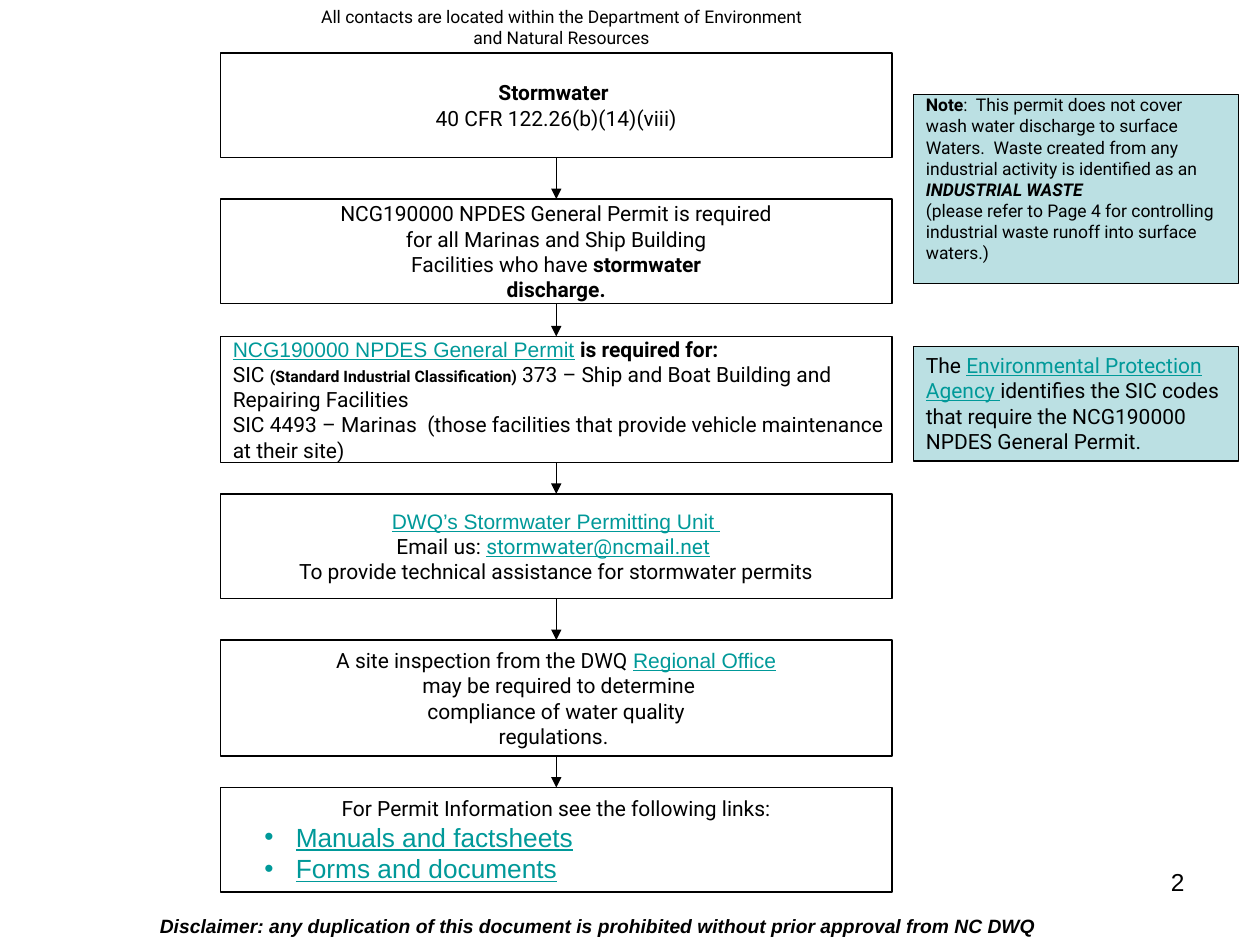
from itertools import pairwise

from lxml.etree import SubElement
from pptx import Presentation
from pptx.dml.color import RGBColor
from pptx.enum.shapes import MSO_CONNECTOR, MSO_SHAPE
from pptx.enum.text import MSO_ANCHOR, PP_ALIGN
from pptx.oxml.ns import qn
from pptx.util import Inches, Pt

BLACK = RGBColor(0x00, 0x00, 0x00)
WHITE = RGBColor(0xFF, 0xFF, 0xFF)
TEAL = RGBColor(0x00, 0x99, 0x99)
PALE_BLUE = RGBColor(0xBB, 0xE0, 0xE3)

FLOW_LEFT, FLOW_WIDTH = 1.75, 5.33
NOTE_LEFT, NOTE_WIDTH = 7.25, 2.58


def text_run(text, font="Roboto", size=12, color=BLACK, bold=False, italic=False, underline=False):
    return dict(text=text, font=font, size=size, color=color,
                bold=bold, italic=italic, underline=underline)


def link_run(text, font="Arial", size=12):
    return text_run(text, font=font, size=size, color=TEAL, underline=True)


class SlideBuilder:
    def __init__(self, slide):
        self.slide = slide
        self.line_width = Pt(0.75)

    def fill_text(self, frame, lines, align=PP_ALIGN.LEFT, bullets_from=None):
        for index, runs in enumerate(lines):
            paragraph = frame.paragraphs[0] if index == 0 else frame.add_paragraph()
            paragraph.alignment = align
            if bullets_from is not None and index >= bullets_from:
                paragraph.alignment = PP_ALIGN.LEFT
                self.add_bullet(paragraph)
            for values in runs:
                run = paragraph.add_run()
                run.text = values["text"]
                run.font.name = values["font"]
                run.font.size = Pt(values["size"])
                run.font.bold = values["bold"]
                run.font.italic = values["italic"]
                run.font.underline = values["underline"]
                run.font.color.rgb = values["color"]

    def add_bullet(self, paragraph):
        properties = paragraph._p.get_or_add_pPr()
        properties.set("marL", str(Inches(0.5)))
        properties.set("indent", str(-Inches(0.25)))
        SubElement(properties, qn("a:buFont"), typeface="Arial")
        SubElement(properties, qn("a:buChar"), char="•")

    def text(self, left, top, width, height, lines, align=PP_ALIGN.LEFT):
        box = self.slide.shapes.add_textbox(
            Inches(left), Inches(top), Inches(width), Inches(height))
        box.text_frame.word_wrap = True
        self.fill_text(box.text_frame, lines, align)

    def box(self, left, top, width, height, lines, fill=WHITE, align=PP_ALIGN.LEFT,
            kind=MSO_SHAPE.FLOWCHART_PROCESS, anchor=MSO_ANCHOR.MIDDLE, wrap=False,
            margin_top=0.05, bullets_from=None):
        shape = self.slide.shapes.add_shape(
            kind, Inches(left), Inches(top), Inches(width), Inches(height))
        shape.shadow.inherit = False
        shape.fill.solid()
        shape.fill.fore_color.rgb = fill
        shape.line.color.rgb = BLACK
        shape.line.width = self.line_width
        frame = shape.text_frame
        frame.word_wrap = wrap
        frame.vertical_anchor = anchor
        frame.margin_top = Inches(margin_top)
        self.fill_text(frame, lines, align, bullets_from)

    def arrow(self, x, start, end):
        connector = self.slide.shapes.add_connector(
            MSO_CONNECTOR.STRAIGHT, Inches(x), Inches(start), Inches(x), Inches(end))
        connector.line.color.rgb = BLACK
        connector.line.width = self.line_width
        SubElement(connector.line._get_or_add_ln(), qn("a:tailEnd"), type="triangle")
        SubElement(connector._element.spPr, qn("a:effectLst"))


CENTER = {"align": PP_ALIGN.CENTER}

FLOW_STEPS = [
    (0.42, 0.83, CENTER, [
        [text_run("Stormwater ", bold=True)],
        [text_run("40 CFR 122.26(b)(14)(viii)")],
    ]),
    (1.58, 0.83, CENTER, [
        [text_run("NCG190000 NPDES General Permit is required")],
        [text_run("for all Marinas and Ship Building")],
        [text_run("Facilities who have "), text_run("stormwater", bold=True)],
        [text_run("discharge.", bold=True)],
    ]),
    (2.67, 1, {}, [
        [link_run("NCG190000 NPDES General Permit"), text_run(" is required for:", bold=True)],
        [text_run("SIC "),
         text_run("(Standard Industrial Classification)", size=9, bold=True),
         text_run(" 373 – Ship and Boat Building and")],
        [text_run("Repairing Facilities")],
        [text_run("SIC 4493 – Marinas  (those facilities that provide vehicle maintenance")],
        [text_run("at their site)")],
    ]),
    (3.92, 0.83, CENTER, [
        [link_run("DWQ’s Stormwater Permitting Unit ")],
        [text_run("Email us: "), link_run("stormwater@ncmail.net", font="Roboto"),
         text_run(" ", font="Arial")],
        [text_run("To provide technical assistance for stormwater permits")],
    ]),
    (5.08, 0.92, CENTER, [
        [text_run("A site inspection from the DWQ "), link_run("Regional Office")],
        [text_run(" may be required to determine")],
        [text_run("compliance of water quality")],
        [text_run("regulations. ")],
    ]),
    (6.25, 0.83, {"align": PP_ALIGN.CENTER, "bullets_from": 1}, [
        [text_run("For Permit Information see the following links:")],
        [link_run("Manuals and factsheets", size=15)],
        [link_run("Forms and documents", size=15)],
    ]),
]

WASTE_NOTE = [
    [text_run("Note", size=10, bold=True),
     text_run(":  This permit does not cover", size=10)],
    [text_run("wash water discharge to surface", size=10)],
    [text_run("Waters.  Waste created from any", size=10)],
    [text_run("industrial activity is identified as an", size=10)],
    [text_run("INDUSTRIAL WASTE", size=10, bold=True, italic=True)],
    [text_run("(please refer to Page 4 for controlling", size=10)],
    [text_run("industrial waste runoff into surface", size=10)],
    [text_run("waters.)", size=10)],
]

AGENCY_NOTE = [[
    text_run("The "),
    link_run("Environmental Protection Agency ", font="Roboto"),
    text_run("identifies the SIC codes that require the NCG190000 NPDES General Permit."),
]]


def main():
    presentation = Presentation()
    presentation.slide_width = Inches(10)
    presentation.slide_height = Inches(7.5)
    builder = SlideBuilder(presentation.slides.add_slide(presentation.slide_layouts[6]))

    builder.text(2.33, 0, 4.25, 0.43, [[text_run(
        "All contacts are located within the Department of Environment and Natural Resources",
        size=10)]], PP_ALIGN.CENTER)

    for top, height, style, lines in FLOW_STEPS:
        builder.box(FLOW_LEFT, top, FLOW_WIDTH, height, lines, **style)
    for (top, height, *_), (next_top, *_) in pairwise(FLOW_STEPS):
        builder.arrow(FLOW_LEFT + FLOW_WIDTH / 2, top + height, next_top)

    builder.box(NOTE_LEFT, 0.75, NOTE_WIDTH, 1.5, WASTE_NOTE, fill=PALE_BLUE,
                anchor=MSO_ANCHOR.TOP, margin_top=0)
    builder.box(NOTE_LEFT, 2.75, NOTE_WIDTH, 0.91, AGENCY_NOTE, fill=PALE_BLUE,
                kind=MSO_SHAPE.RECTANGLE, anchor=MSO_ANCHOR.TOP, wrap=True)

    builder.text(7.17, 6.83, 2.33, 0.52, [[text_run("2", font="Arial", size=14)]],
                 PP_ALIGN.RIGHT)
    builder.text(1.17, 7.21, 7.25, 0.29, [[text_run(
        "Disclaimer: any duplication of this document is prohibited without prior approval from NC DWQ",
        font="Arial", size=11, bold=True, italic=True)]])

    presentation.save("out.pptx")


if __name__ == "__main__":
    main()
